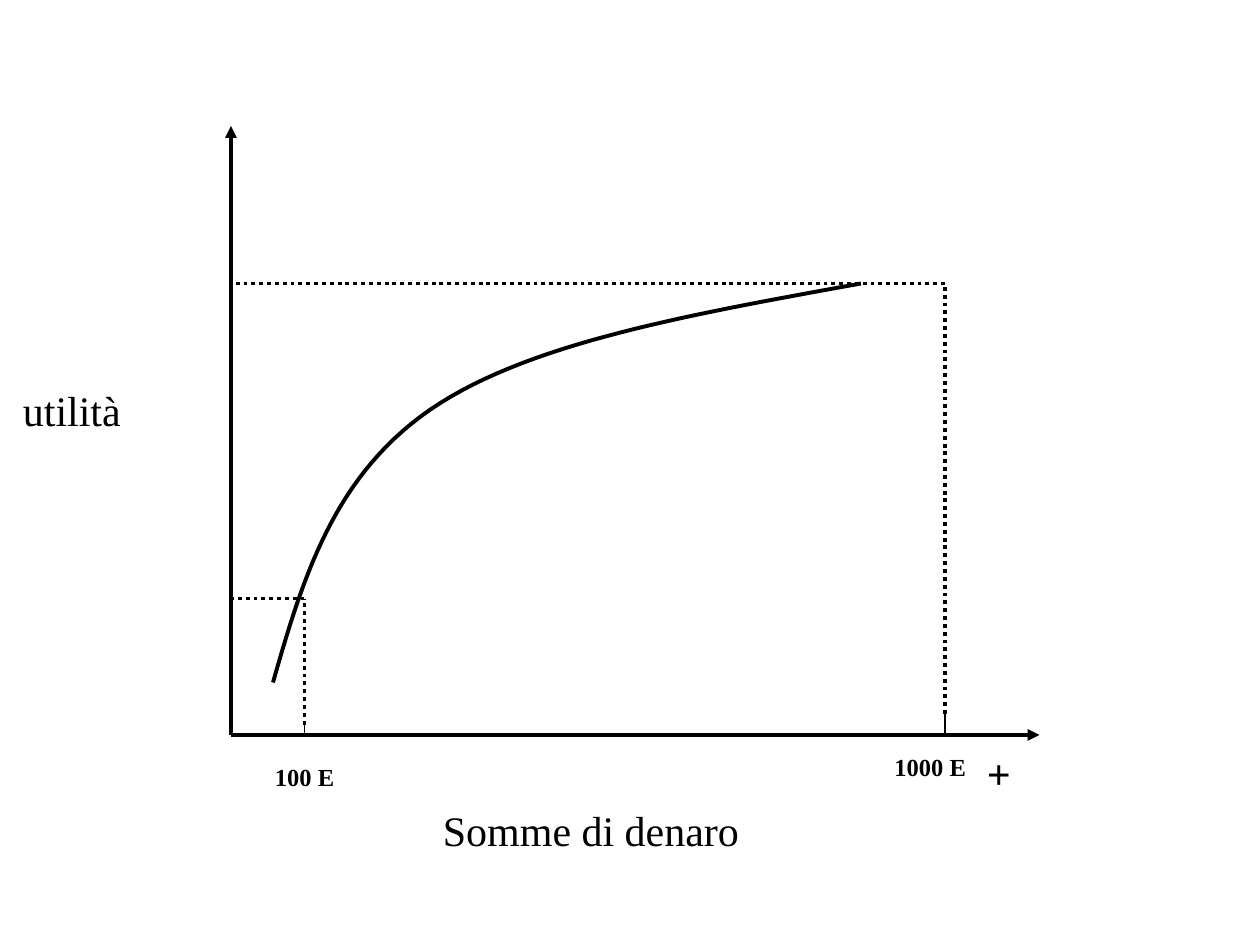
from lxml import etree
from pptx import Presentation
from pptx.dml.color import RGBColor
from pptx.enum.dml import MSO_LINE
from pptx.enum.shapes import MSO_CONNECTOR
from pptx.enum.text import MSO_AUTO_SIZE
from pptx.oxml.ns import qn
from pptx.util import Inches, Pt

STRAIGHT = MSO_CONNECTOR.STRAIGHT
DOTTED = MSO_LINE.ROUND_DOT
GROW = MSO_AUTO_SIZE.SHAPE_TO_FIT_TEXT
FONT = "Times New Roman"
INK = "000000"
COLS, ROWS = 120, 90
LEFT, BASE = 22, 70
LOW, HIGH = (29, 57), (90, 27)
BENDS = [
    [(26, 65), (28.8, 55.2), (31.7, 45.4), (41, 39)],
    [(41, 39), (50.3, 32.6), (66.1, 29.9), (82, 27)],
]


def cell(n):
    """Turn a count of grid cells into a length."""
    return round(n * Inches(10) / COLS)


def paint(line, width, color=INK):
    """Set the width and colour of a line."""
    line.width = Pt(width)
    line.color.rgb = RGBColor.from_string(color)


def rule(slide, start, end, width=2.25, dash=None, arrow=False):
    """Draw a straight line between two grid points."""
    link = slide.shapes.add_connector(STRAIGHT, *map(cell, start + end))
    paint(link.line, width)
    if dash:
        link.line.dash_style = dash
    props = link._element.spPr
    if arrow:
        etree.SubElement(props.find(qn("a:ln")), qn("a:tailEnd"), type="triangle")
    etree.SubElement(props, qn("a:effectLst"))


def label(slide, text, box, size=24, bold=False, wrap=True, before=0.125, color=INK):
    """Add a text box, with space before as a share of the font size."""
    frame = slide.shapes.add_textbox(*map(cell, box)).text_frame
    frame.word_wrap = wrap
    frame.auto_size = GROW
    para = frame.paragraphs[0]
    para.space_before = Pt(size * before)
    run = para.add_run()
    run.text = text
    run.font.name = FONT
    run.font.size = Pt(size)
    run.font.bold = bold
    run.font.color.rgb = RGBColor.from_string(color)


def bezier(ends, t):
    """Find the point at share t of a cubic curve."""
    terms = zip((1, 3, 3, 1), range(4), ends)
    parts = [(k * (1 - t) ** (3 - i) * t**i, p) for k, i, p in terms]
    return tuple(cell(sum(w * p[axis] for w, p in parts)) for axis in (0, 1))


def curve(slide, bends, steps=30):
    """Draw a smooth open line through joined cubic curves."""
    dots = [bezier(b, n / steps) for b in bends for n in range(1, steps + 1)]
    pen = slide.shapes.build_freeform(*bezier(bends[0], 0))
    pen.add_line_segments(dots, close=False)
    shape = pen.convert_to_shape()
    shape.shadow.inherit = False
    shape.fill.background()
    paint(shape.line, 2.25)


def guide(slide, point, tick):
    """Mark a point with a tick and dotted lines to both axes."""
    x, y = point
    rule(slide, (x, BASE), (x, BASE - tick), width=0.75)
    rule(slide, (x, BASE - tick), point, dash=DOTTED)
    rule(slide, point, (LEFT, y), dash=DOTTED)


def main():
    """Build the utility curve slide."""
    deck = Presentation()
    deck.slide_width, deck.slide_height = cell(COLS), cell(ROWS)
    slide = deck.slides.add_slide(deck.slide_layouts[6])
    for tip in ((99, BASE), (LEFT, 12)):
        rule(slide, (LEFT, BASE), tip, arrow=True)
    label(slide, "Somme di denaro", (41, 76, 46, 6))
    label(slide, "+", (92.8, 70.6, 4.7, 6), bold=True, wrap=False, before=0)
    label(slide, "utilità", (1, 36, 17, 6))
    curve(slide, BENDS)
    guide(slide, LOW, 1)
    label(slide, "100 E", (25, 72, 9, 4), size=14, bold=True)
    guide(slide, HIGH, 2)
    label(slide, "1000 E", (84, 71, 15, 4), size=14, bold=True)
    deck.save("out.pptx")


if __name__ == "__main__":
    main()
